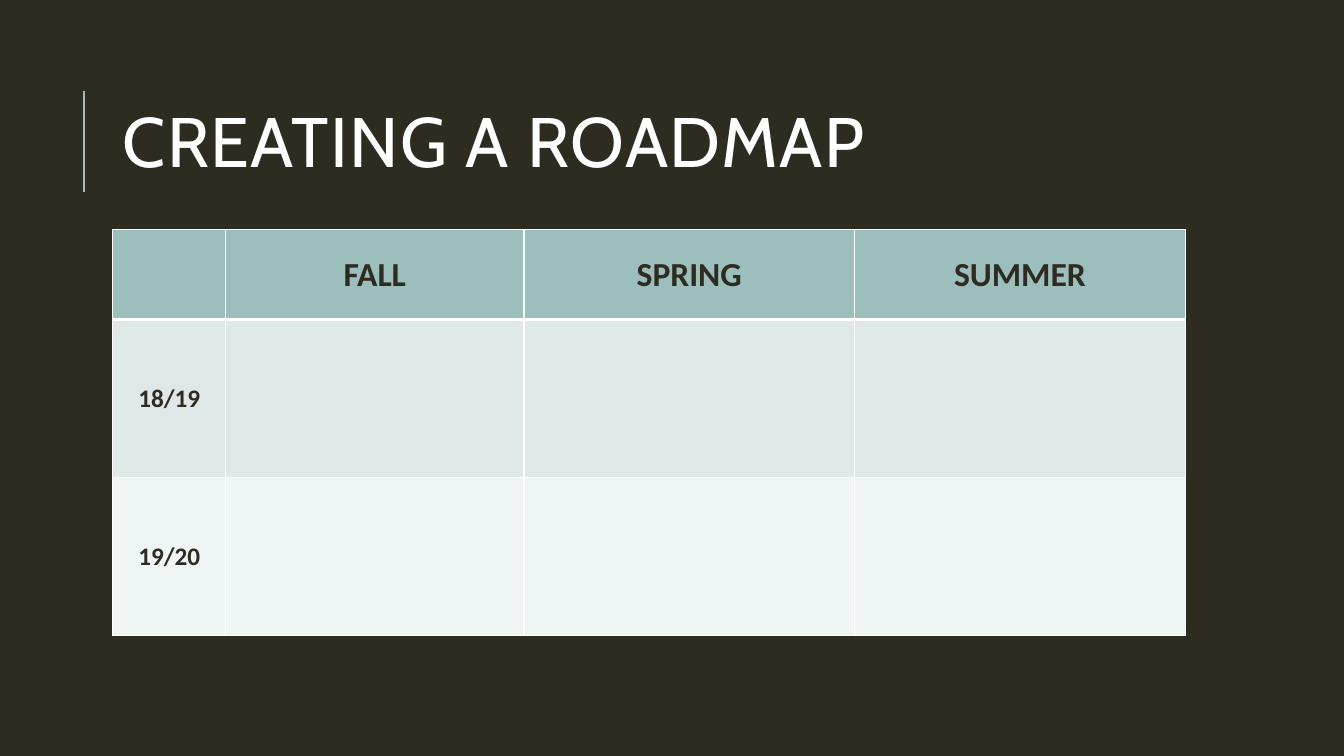
from dataclasses import dataclass

from lxml.etree import SubElement
from pptx import Presentation
from pptx.dml.color import RGBColor
from pptx.enum.shapes import MSO_CONNECTOR
from pptx.enum.text import MSO_ANCHOR, PP_ALIGN
from pptx.oxml.ns import qn
from pptx.slide import Slide
from pptx.table import _Cell
from pptx.text.text import _Paragraph
from pptx.util import Pt

DARK = "2E2B21"
TEAL = "9CBEBD"
WHITE = "FFFFFF"
LEFT = 80.6
COLUMN_WIDTHS = (80.6, 213.1, 236.2, 236.2)


@dataclass(frozen=True)
class RoadmapRow:
    labels: tuple[str, str, str, str]
    height: float
    fill: str
    font_size: float
    top_border: float
    bottom_border: float


ROWS = (
    RoadmapRow(("", "FALL", "SPRING", "SUMMER"), 64, TEAL, 24, 1, 3),
    RoadmapRow(("18/19", "", "", ""), 113, "DEE8E8", 18, 3, 1),
    RoadmapRow(("19/20", "", "", ""), 113, "EFF4F4", 18, 1, 1),
)


def color(value: str) -> RGBColor:
    return RGBColor.from_string(value)


def format_runs(paragraph: _Paragraph, font_name: str, size: float, fill: str, bold: bool) -> None:
    for run in paragraph.runs:
        run.font.name = font_name
        run.font.size = Pt(size)
        run.font.bold = bold
        run.font.color.rgb = color(fill)


def draw_title(slide: Slide) -> None:
    accent = slide.shapes.add_connector(MSO_CONNECTOR.STRAIGHT, Pt(60), Pt(136.8), Pt(60), Pt(64.8))
    accent.line.color.rgb = color(TEAL)
    accent.line.width = Pt(1.5)
    SubElement(accent._element.spPr, qn("a:effectLst"))

    title = slide.shapes.add_textbox(Pt(LEFT), Pt(46.1), Pt(765.4), Pt(118.1))
    title.text_frame.word_wrap = True
    title.text_frame.vertical_anchor = MSO_ANCHOR.MIDDLE
    title.text_frame.text = "CREATING A ROADMAP"
    paragraph = title.text_frame.paragraphs[0]
    paragraph.line_spacing = 0.8
    format_runs(paragraph, "Cabin", 50, WHITE, False)
    for run in paragraph.runs:
        run.font._element.set("spc", "100")


def set_borders(cell: _Cell, row: RoadmapRow) -> None:
    properties = cell._tc.get_or_add_tcPr()
    borders = (("lnL", 1), ("lnR", 1), ("lnT", row.top_border), ("lnB", row.bottom_border))
    for side, width in borders:
        border = SubElement(properties, qn(f"a:{side}"), w=str(Pt(width)))
        solid_fill = SubElement(border, qn("a:solidFill"))
        SubElement(solid_fill, qn("a:srgbClr"), val=WHITE)


def format_cell(cell: _Cell, label: str, row: RoadmapRow) -> None:
    set_borders(cell, row)
    cell.fill.solid()
    cell.fill.fore_color.rgb = color(row.fill)
    cell.vertical_anchor = MSO_ANCHOR.MIDDLE
    cell.text_frame.text = label
    paragraph = cell.text_frame.paragraphs[0]
    paragraph.alignment = PP_ALIGN.CENTER
    format_runs(paragraph, "Calibri", row.font_size, DARK, True)


def draw_roadmap(slide: Slide) -> None:
    height = sum(row.height for row in ROWS)
    table = slide.shapes.add_table(
        len(ROWS), len(COLUMN_WIDTHS), Pt(LEFT), Pt(164.2), Pt(sum(COLUMN_WIDTHS)), Pt(height)
    ).table
    for column, width in zip(table.columns, COLUMN_WIDTHS):
        column.width = Pt(width)
    for row_index, row in enumerate(ROWS):
        table.rows[row_index].height = Pt(row.height)
        for column_index, label in enumerate(row.labels):
            format_cell(table.cell(row_index, column_index), label, row)


def main() -> None:
    presentation = Presentation()
    presentation.slide_width = Pt(960)
    presentation.slide_height = Pt(540)
    slide = presentation.slides.add_slide(presentation.slide_layouts[6])
    slide.background.fill.solid()
    slide.background.fill.fore_color.rgb = color(DARK)
    draw_title(slide)
    draw_roadmap(slide)
    presentation.save("out.pptx")


if __name__ == "__main__":
    main()
